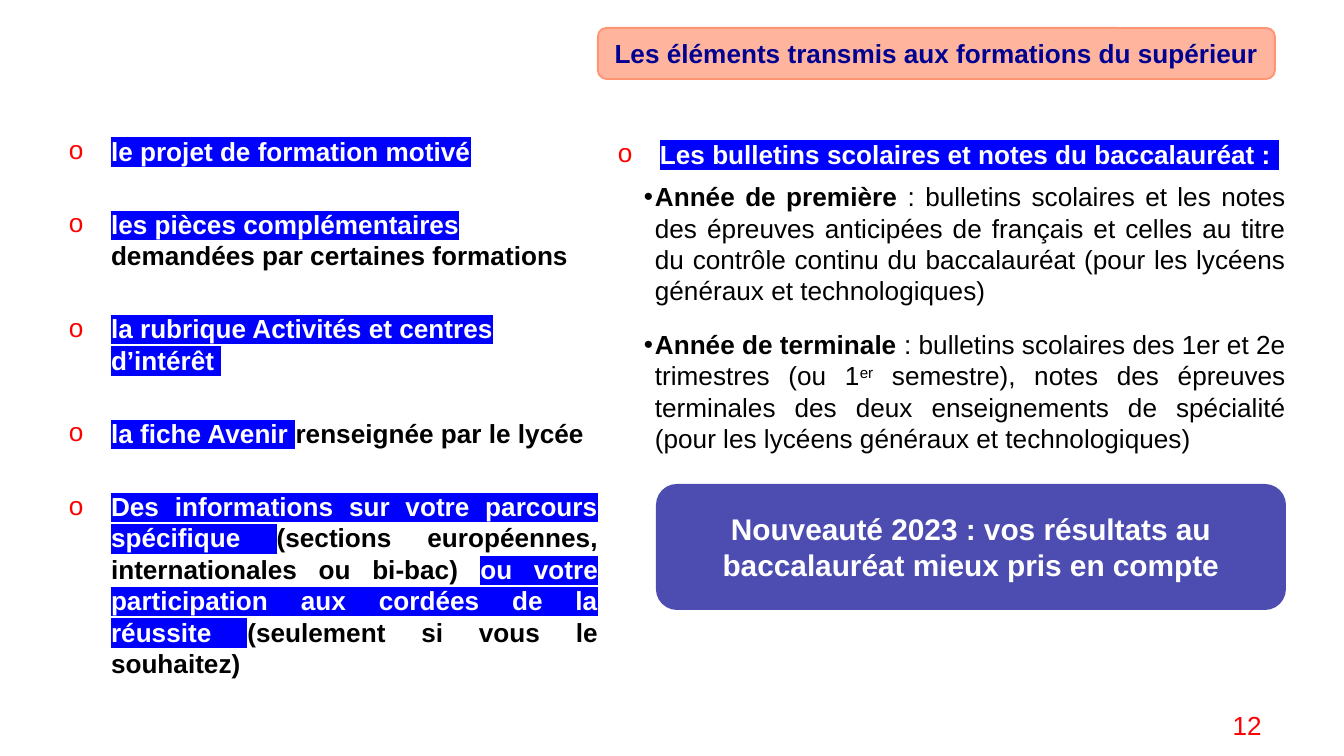
import pptx
import pptx.util
import pptx.dml.color
import pptx.enum.shapes
import pptx.enum.text
import pptx.oxml.ns
import lxml.etree

SCALE = 914400 / 134.4
FONT = "Arial"
RED, BLUE, NAVY = "FF0000", "0000FF", "000091"
CORAL, WHITE, BLACK = "FF9575", "FFFFFF", "000000"
ALIGN = pptx.enum.text.PP_ALIGN


def px(length):
    return pptx.util.Emu(round(length * SCALE))


def color(value):
    return pptx.dml.color.RGBColor.from_string(value)


def add_xml(parent, tag, **attributes):
    name = pptx.oxml.ns.qn(tag)
    return lxml.etree.SubElement(parent, name, attributes)


def add_span(para, text, size=14, ink=BLACK, bold=False, highlight=None, baseline=None):
    span = para.add_run()
    span.text = text
    span.font.size = pptx.util.Pt(size)
    span.font.bold = bold
    span.font.color.rgb = color(ink)
    properties = span.font._element
    if highlight:
        add_xml(add_xml(properties, "a:highlight"), "a:srgbClr", val=highlight)
    if baseline:
        properties.set("baseline", str(baseline))
    span.font.name = FONT


def add_marked(para, text):
    add_span(para, text, ink=WHITE, bold=True, highlight=BLUE)


def add_para(frame, first=False, align=ALIGN.LEFT, before=0, after=0):
    para = frame.paragraphs[0] if first else frame.add_paragraph()
    para.alignment = align
    if before and not first:
        para.space_before = pptx.util.Pt(before)
    if after:
        para.space_after = pptx.util.Pt(after)
    return para


def add_bullet(para, char, ink, margin, hanging):
    properties = para._p.get_or_add_pPr()
    properties.set("marL", str(px(margin)))
    properties.set("indent", str(-px(hanging)))
    add_xml(add_xml(properties, "a:buClr"), "a:srgbClr", val=ink)
    add_xml(properties, "a:buFont", typeface=FONT)
    add_xml(properties, "a:buChar", char=char)


def add_text_box(page, left, top, width, height, inset=True):
    box = page.shapes.add_textbox(px(left), px(top), px(width), px(height))
    frame = box.text_frame
    frame.word_wrap = True
    if not inset:
        frame.margin_left = frame.margin_right = 0
        frame.margin_top = frame.margin_bottom = 0
    return frame


def add_banner(page, left, top, width, height, text, fill, line=None, **text_format):
    shape = page.shapes.add_shape(
        pptx.enum.shapes.MSO_SHAPE.ROUNDED_RECTANGLE,
        px(left), px(top), px(width), px(height))
    shape.shadow.inherit = False
    shape.fill.solid()
    shape.fill.fore_color.rgb = color(fill)
    swatch = shape._element.spPr.find(".//" + pptx.oxml.ns.qn("a:srgbClr"))
    add_xml(swatch, "a:alpha", val="70000")
    if line:
        shape.line.color.rgb = color(line)
        shape.line.width = pptx.util.Pt(1)
    else:
        shape.line.fill.background()
    frame = shape.text_frame
    frame.word_wrap = True
    frame.vertical_anchor = pptx.enum.text.MSO_ANCHOR.MIDDLE
    para = add_para(frame, first=True, align=ALIGN.CENTER)
    add_span(para, text, bold=True, **text_format)


def add_elements(page):
    items = [
        [("le projet de formation motivé", True)],
        [("les pièces complémentaires ", True),
         ("demandées par certaines formations", False)],
        [("la rubrique Activités et centres d’intérêt ", True)],
        [("la fiche Avenir ", True), ("renseignée par le lycée", False)],
        [("Des informations sur votre parcours spécifique ", True),
         ("(sections européennes, internationales ou bi-bac) ", False),
         ("ou votre participation aux cordées de la réussite ", True),
         ("(seulement si vous le souhaitez)", False)],
    ]
    frame = add_text_box(page, 69, 135, 529, 550, inset=False)
    for index, item in enumerate(items):
        align = ALIGN.JUSTIFY if item is items[-1] else ALIGN.LEFT
        para = add_para(frame, first=index == 0, align=align, before=22.4)
        add_bullet(para, "o", RED, 42, 42)
        for text, marked in item:
            if marked:
                add_marked(para, text)
            else:
                add_span(para, text, bold=True)


def add_reports(page):
    years = [
        ("Année de première ",
         [(": bulletins scolaires et les notes des épreuves anticipées de français "
           "et celles au titre du contrôle continu du baccalauréat "
           "(pour les lycéens généraux et technologiques)", None)]),
        ("Année de terminale ",
         [(": bulletins scolaires des 1er et 2e trimestres (ou 1", None),
          ("er", 30000),
          (" semestre), notes des épreuves terminales des deux enseignements "
           "de spécialité (pour les lycéens généraux et technologiques)", None)]),
    ]
    frame = add_text_box(page, 618, 138, 668, 367, inset=False)
    heading = add_para(frame, first=True)
    add_bullet(heading, "o", RED, 42, 42)
    add_marked(heading, "Les bulletins scolaires et notes du baccalauréat : ")
    for year, details in years:
        para = add_para(frame, align=ALIGN.JUSTIFY, before=6, after=6)
        para.level = 1
        add_bullet(para, "•", BLACK, 37, 11)
        add_span(para, year, bold=True)
        for text, baseline in details:
            add_span(para, text, baseline=baseline)


def add_page_number(page):
    frame = add_text_box(page, 1116, 703, 159, 52)
    para = add_para(frame, first=True, align=ALIGN.RIGHT)
    add_span(para, "12", ink=RED)


def main():
    deck = pptx.Presentation()
    deck.slide_width = px(1344)
    deck.slide_height = px(756)
    page = deck.slides.add_slide(deck.slide_layouts[6])
    add_elements(page)
    add_reports(page)
    add_page_number(page)
    add_banner(page, 598, 28, 677, 51,
               "Les éléments transmis aux formations du supérieur",
               CORAL, line=CORAL, ink=NAVY)
    add_banner(page, 656, 484, 630, 126,
               "Nouveauté 2023 : vos résultats au baccalauréat mieux pris en compte",
               NAVY, ink=WHITE, size=16)
    deck.save("out.pptx")


if __name__ == "__main__":
    main()
